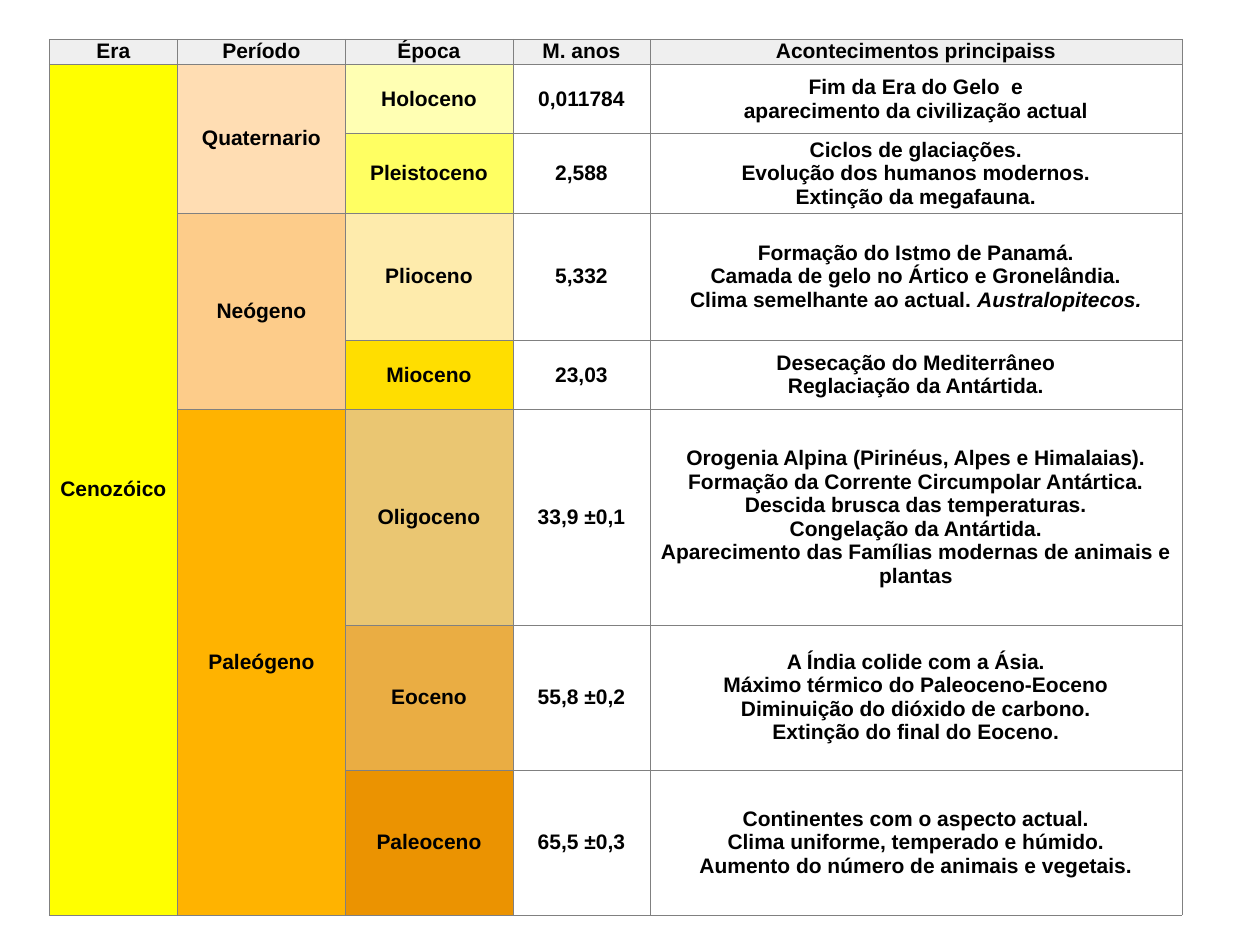
from dataclasses import dataclass
from typing import Optional

from lxml import etree
from pptx import Presentation
from pptx import util as u
from pptx.dml.color import RGBColor
from pptx.enum import text
from pptx.oxml import ns

FONT = "Arial"
BORDER = "808080"
HEADER_FILL = "EFEFEF"
COL_WIDTHS = [1.02, 1.33, 1.33, 1.09, 4.22]
HEADER_HEIGHT = 0.2
HEADERS = ["Era", "Período", "Época", "M. anos", "Acontecimentos principaiss"]


@dataclass
class Span:
    """An era or period that covers several epochs."""
    name: str
    fill: str
    rows: int


@dataclass
class Epoch:
    name: str
    fill: str
    height: float
    age: str
    events: list[str]
    species: str = ""


ERAS = [Span("Cenozóico", "FFFF00", 7)]
PERIODS = [
    Span("Quaternario", "FFDDB3", 2),
    Span("Neógeno", "FDCC8A", 2),
    Span("Paleógeno", "FFB300", 3),
]
EPOCHS = [
    Epoch("Holoceno", "FFFFB3", 0.55, "0,011784",
          ["Fim da Era do Gelo  e", "aparecimento da civilização actual"]),
    Epoch("Pleistoceno", "FFFF62", 0.63, "2,588",
          ["Ciclos de glaciações.", "Evolução dos humanos modernos.",
           "Extinção da megafauna."]),
    Epoch("Plioceno", "FEEBAC", 1.01, "5,332",
          ["Formação do Istmo de Panamá.",
           "Camada de gelo no Ártico e Gronelândia.",
           "Clima semelhante ao actual. "], "Australopitecos."),
    Epoch("Mioceno", "FFDE00", 0.55, "23,03",
          ["Desecação do Mediterrâneo", "Reglaciação da Antártida."]),
    Epoch("Oligoceno", "EAC672", 1.71, "33,9 ±0,1",
          ["Orogenia Alpina (Pirinéus, Alpes e Himalaias).",
           "Formação da Corrente Circumpolar Antártica.",
           "Descida brusca das temperaturas.", "Congelação da Antártida.",
           "Aparecimento das Famílias modernas de animais e plantas"]),
    Epoch("Eoceno", "EAAD43", 1.15, "55,8 ±0,2",
          ["A Índia colide com a Ásia.", "Máximo térmico do Paleoceno-Eoceno",
           "Diminuição do dióxido de carbono.", "Extinção do final do Eoceno."]),
    Epoch("Paleoceno", "EB9301", 1.15, "65,5 ±0,3",
          ["Continentes com o aspecto actual.",
           "Clima uniforme, temperado e húmido.",
           "Aumento do número de animais e vegetais."]),
]


def rgb(value: str) -> RGBColor:
    return RGBColor.from_string(value)


def set_borders(cell) -> None:
    """Draw a thin line on all four sides, ahead of the cell's fill."""
    props = cell._tc.get_or_add_tcPr()
    for i, side in enumerate(("lnL", "lnR", "lnT", "lnB")):
        ln = etree.Element(ns.qn(f"a:{side}"), w=str(u.Pt(0.25)))
        fill = etree.SubElement(ln, ns.qn("a:solidFill"))
        etree.SubElement(fill, ns.qn("a:srgbClr"), val=BORDER)
        props.insert(i, ln)


def add_run(p, words: str, italic: bool = False) -> None:
    r = p.add_run()
    r.text = words
    r.font.name, r.font.size = FONT, u.Pt(12)
    r.font.bold, r.font.italic = True, italic
    r.font.color.rgb = rgb("000000")


def write_cell(cell, lines: list[str], fill: Optional[str] = None,
               italic_end: str = "") -> None:
    cell.margin_left = cell.margin_right = 0
    cell.margin_top = cell.margin_bottom = 0
    cell.vertical_anchor = text.MSO_ANCHOR.MIDDLE
    if fill:
        cell.fill.solid()
        cell.fill.fore_color.rgb = rgb(fill)
    else:
        cell.fill.background()
    p = cell.text_frame.paragraphs[0]
    p.alignment = text.PP_ALIGN.CENTER
    for i, line in enumerate(lines):
        if i:
            p.add_line_break()
        add_run(p, line)
    if italic_end:
        add_run(p, italic_end, italic=True)


def write_spans(table, col: int, spans: list[Span]) -> None:
    row = 1
    for span in spans:
        cell = table.cell(row, col)
        cell.merge(table.cell(row + span.rows - 1, col))
        write_cell(cell, [span.name], span.fill)
        row += span.rows


def main() -> None:
    prs = Presentation()
    prs.slide_width, prs.slide_height = u.Inches(10), u.Inches(7.5)
    s = prs.slides.add_slide(prs.slide_layouts[6])

    # Table grid
    heights = [HEADER_HEIGHT] + [epoch.height for epoch in EPOCHS]
    table = s.shapes.add_table(
        len(heights), len(COL_WIDTHS), u.Inches(0.39), u.Inches(0.31),
        u.Inches(sum(COL_WIDTHS)), u.Inches(sum(heights))).table
    table.first_row = table.horz_banding = False
    for column, width in zip(table.columns, COL_WIDTHS):
        column.width = u.Inches(width)
    for row, height in zip(table.rows, heights):
        row.height = u.Inches(height)

    # Header row
    for col, header in enumerate(HEADERS):
        write_cell(table.cell(0, col), [header], HEADER_FILL)

    # Eras and periods, then one row per epoch
    write_spans(table, 0, ERAS)
    write_spans(table, 1, PERIODS)
    for row, epoch in enumerate(EPOCHS, start=1):
        write_cell(table.cell(row, 2), [epoch.name], epoch.fill)
        write_cell(table.cell(row, 3), [epoch.age])
        write_cell(table.cell(row, 4), epoch.events, italic_end=epoch.species)

    # Borders
    for cell in table.iter_cells():
        set_borders(cell)

    prs.save("out.pptx")


if __name__ == "__main__":
    main()
